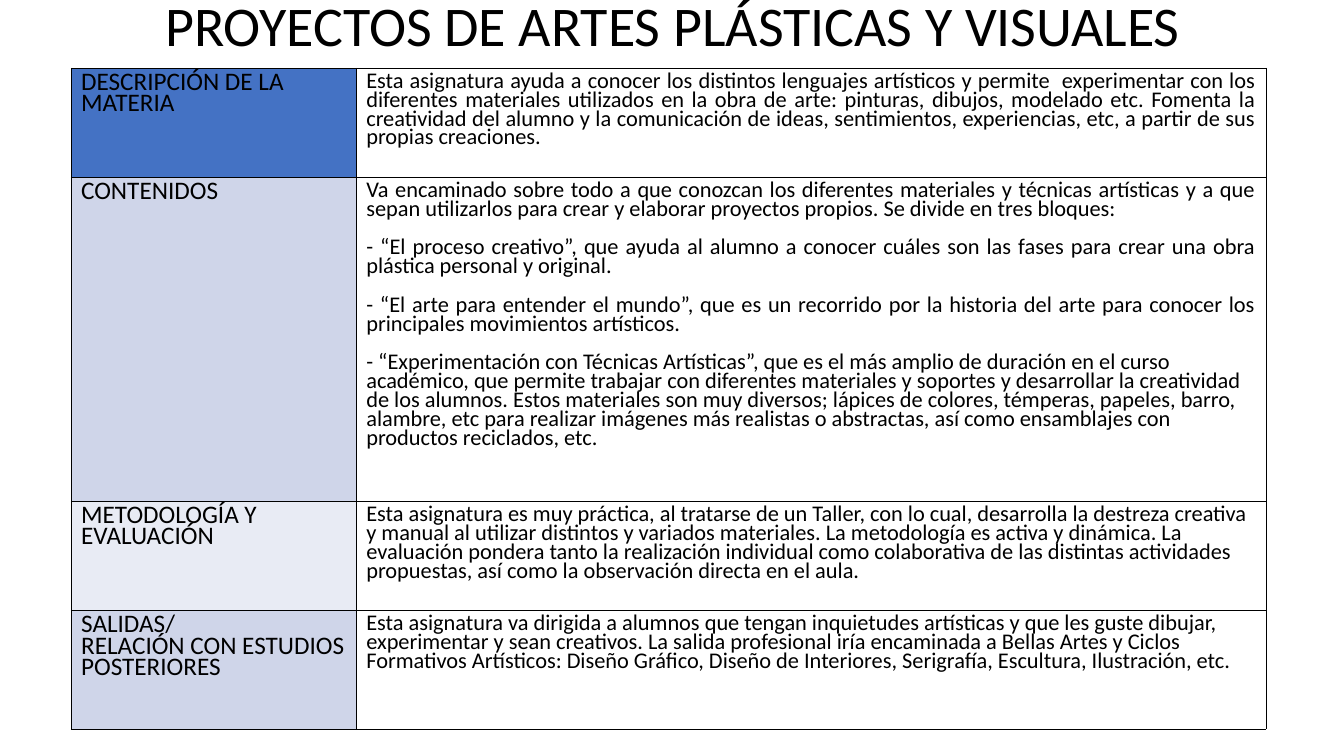
from dataclasses import dataclass

from lxml import etree
from pptx import Presentation
from pptx import util as u
from pptx.dml.color import RGBColor
from pptx.enum import text
from pptx.oxml.ns import qn

# Content: heading paragraphs, heading fill, body paragraphs, justified count, row height
TITLE = "PROYECTOS DE ARTES PLÁSTICAS Y VISUALES"
SECTIONS = [
    (["DESCRIPCIÓN DE LA MATERIA"], "strong",
     ["Esta asignatura ayuda a conocer los distintos lenguajes artísticos y permite  experimentar con los "
      "diferentes materiales utilizados en la obra de arte: pinturas, dibujos, modelado etc. Fomenta la "
      "creatividad del alumno y la comunicación de ideas, sentimientos, experiencias, etc, a partir de sus "
      "propias creaciones."], 1, 109),
    (["CONTENIDOS"], "medium",
     ["Va encaminado sobre todo a que conozcan los diferentes materiales y técnicas artísticas y a que "
      "sepan utilizarlos para crear y elaborar proyectos propios. Se divide en tres bloques:",
      "- “El proceso creativo”, que ayuda al alumno a conocer cuáles son las fases para crear una obra "
      "plástica personal y original.",
      "- “El arte para entender el mundo”, que es un recorrido por la historia del arte para conocer los "
      "principales movimientos artísticos.",
      "- “Experimentación con Técnicas Artísticas”, que es el más amplio de duración en el curso "
      "académico, que permite trabajar con diferentes materiales y soportes y desarrollar la creatividad "
      "de los alumnos. Estos materiales son muy diversos; lápices de colores, témperas, papeles, barro, "
      "alambre, etc para realizar imágenes más realistas o abstractas, así como ensamblajes con "
      "productos reciclados, etc."], 3, 324),
    (["METODOLOGÍA Y EVALUACIÓN"], "light",
     ["Esta asignatura es muy práctica, al tratarse de un Taller, con lo cual, desarrolla la destreza "
      "creativa y manual al utilizar distintos y variados materiales. La metodología es activa y dinámica. "
      "La evaluación pondera tanto la realización individual como colaborativa de las distintas actividades "
      "propuestas, así como la observación directa en el aula."], 0, 109),
    (["SALIDAS/", "RELACIÓN CON ESTUDIOS POSTERIORES"], "medium",
     ["Esta asignatura va dirigida a alumnos que tengan inquietudes artísticas y que les guste dibujar, "
      "experimentar y sean creativos. La salida profesional iría encaminada a Bellas Artes y Ciclos "
      "Formativos Artísticos: Diseño Gráfico, Diseño de Interiores, Serigrafía, Escultura, Ilustración, "
      "etc."], 0, 118),
]

# Layout in px
PX = 9080
SLIDE = (1343, 755)
TITLE_BOX = (93, 2, 1158, 52)
TABLE_ORIGIN = (71, 68)
COLUMNS = (285, 909)


@dataclass(frozen=True)
class Theme:
    font: str = "Calibri"
    ink: str = "000000"
    strong: str = "4472C4"
    medium: str = "CFD5E9"
    light: str = "E8EBF4"
    title_size: int = 40
    heading_size: int = 18
    body_size: int = 16
    title_leading: float = 0.9
    cell_leading: float = 0.69
    block_gap: int = 14
    border: float = 0.45


THEME = Theme()


def px(*lengths):
    return [u.Emu(length * PX) for length in lengths]


def write(frame, paragraphs, size, leading, gap=0, justified=0):
    frame.text = "\n".join(paragraphs)
    for index, paragraph in enumerate(frame.paragraphs):
        paragraph.line_spacing = leading
        paragraph.space_before = u.Pt(gap if index else 0)
        paragraph.space_after = u.Pt(0)
        paragraph.alignment = text.PP_ALIGN.JUSTIFY if index < justified else text.PP_ALIGN.LEFT
        for run in paragraph.runs:
            run.font.name = THEME.font
            run.font.size = u.Pt(size)
            run.font.bold = False
            run.font.color.rgb = RGBColor.from_string(THEME.ink)


def add_borders(cell):
    properties = cell._tc.get_or_add_tcPr()
    for index, side in enumerate(("a:lnL", "a:lnR", "a:lnT", "a:lnB")):
        line = etree.Element(qn(side), w=str(u.Pt(THEME.border)))
        fill = etree.SubElement(line, qn("a:solidFill"))
        etree.SubElement(fill, qn("a:srgbClr"), val=THEME.ink)
        properties.insert(index, line)


def main():
    deck = Presentation()
    deck.slide_width, deck.slide_height = px(*SLIDE)
    slide = deck.slides.add_slide(deck.slide_layouts[5])

    # Title
    title = slide.shapes.title
    title.left, title.top, title.width, title.height = px(*TITLE_BOX)
    title.text_frame.auto_size = text.MSO_AUTO_SIZE.NONE
    title.text_frame.vertical_anchor = text.MSO_ANCHOR.MIDDLE
    write(title.text_frame, [TITLE], THEME.title_size, THEME.title_leading)
    title.text_frame.paragraphs[0].alignment = text.PP_ALIGN.CENTER

    # Table grid
    heights = [section[-1] for section in SECTIONS]
    table = slide.shapes.add_table(len(SECTIONS), len(COLUMNS),
                                   *px(*TABLE_ORIGIN, sum(COLUMNS), sum(heights))).table
    table.first_row = table.horz_banding = False
    for column, width in zip(table.columns, px(*COLUMNS)):
        column.width = width

    # Sections
    for row, (heading, shade, body, justified, height) in zip(table.rows, SECTIONS):
        row.height = px(height)[0]
        heading_cell, body_cell = row.cells
        heading_cell.fill.solid()
        heading_cell.fill.fore_color.rgb = RGBColor.from_string(getattr(THEME, shade))
        body_cell.fill.background()
        write(heading_cell.text_frame, heading, THEME.heading_size, THEME.cell_leading)
        write(body_cell.text_frame, body, THEME.body_size, THEME.cell_leading,
              THEME.block_gap, justified)
        for cell in (heading_cell, body_cell):
            add_borders(cell)

    deck.save("out.pptx")


if __name__ == "__main__":
    main()
